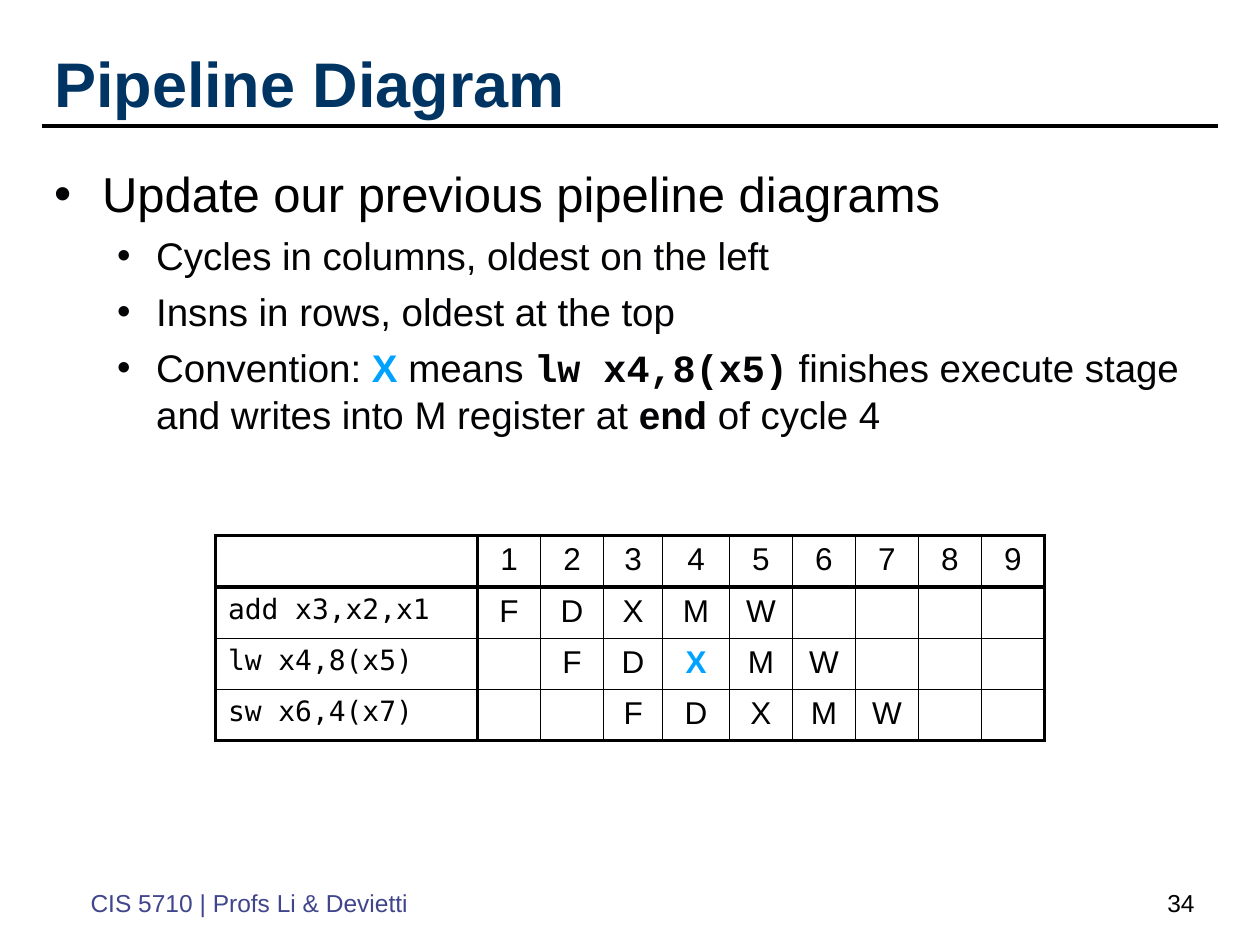
from dataclasses import dataclass

from lxml.etree import SubElement as Sub
from pptx import Presentation
from pptx.dml.color import RGBColor as Rgb
from pptx.enum.shapes import MSO_CONNECTOR as Conn
from pptx.enum.text import MSO_ANCHOR as Anchor, MSO_AUTO_SIZE as Auto, PP_ALIGN as Align
from pptx.oxml.ns import qn
from pptx.util import Inches, Pt


@dataclass(frozen=True)
class Theme:
    black: str = "000000"
    ink: str = "030305"
    navy: str = "003462"
    blue: str = "00A2FF"
    violet: str = "40458C"
    sans: str = "Arial"
    code: str = "Courier New"
    mono: str = "DejaVu Sans Mono"
    title: float = 36
    lead: float = 28
    point: float = 22
    cell: float = 18
    insn: float = 16
    foot: float = 14
    gap: float = 5.6
    thick: float = 2.25
    thin: float = 0.75


T = Theme()
HOT = {"color": T.blue, "bold": True}

# Each point: level, then runs of text with their format changes
POINTS = [
    (0, [("Update our previous pipeline diagrams", {"size": T.lead, "color": T.black})]),
    (1, [("Cycles in columns, oldest on the left", {})]),
    (1, [("Insns in rows, oldest at the top", {})]),
    (1, [("Convention: ", {}), ("X", HOT), (" means ", {}),
         ("lw x4,8(x5)", {"name": T.code, "bold": True}),
         (" finishes execute stage and writes into M register at ", {}),
         ("end", {"bold": True}), (" of cycle 4", {})]),
]
INDENTS = [(0.38, -0.38), (0.81, -0.31)]

# Each instruction starts one cycle after the one before
INSNS = ["add x3,x2,x1", "lw x4,8(x5)", "sw x6,4(x7)"]
STAGES = "FDXMW"
CYCLES = 9
COLS = [2.08, 0.5, 0.5, 0.47, 0.53] + [0.5] * 5
ROWS = [0.41, 0.38, 0.38, 0.38]


def add_run(para, text, size, color=T.black, name=T.sans, bold=False):
    run = para.add_run()
    run.text = text
    run.font.color.rgb = Rgb.from_string(color)
    for key, value in {"size": Pt(size), "name": name, "bold": bold}.items():
        setattr(run.font, key, value)


def place(shape, box):
    for key, value in zip(("left", "top", "width", "height"), box):
        setattr(shape, key, Inches(value))


def set_frame(shape, anchor):
    frame = shape.text_frame
    form = {"word_wrap": True, "auto_size": Auto.NONE, "vertical_anchor": anchor}
    for key, value in form.items():
        setattr(frame, key, value)
    return frame


def add_title(slide, box):
    shape = slide.shapes.title
    place(shape, box)
    para = set_frame(shape, Anchor.BOTTOM).paragraphs[0]
    para.alignment = Align.LEFT
    add_run(para, "Pipeline Diagram", T.title, T.navy, bold=True)
    # Rule under the title
    left, top, width, height = box
    base = Inches(top + height)
    rule = slide.shapes.add_connector(
        Conn.STRAIGHT, Inches(left), base, Inches(left + width), base)
    rule.line.color.rgb = Rgb.from_string(T.black)
    rule.line.width = Pt(T.thick)
    Sub(rule._element.spPr, qn("a:effectLst"))


def set_bullet(para, level):
    props = para._p.get_or_add_pPr()
    for key, value in zip(("marL", "indent"), INDENTS[level]):
        props.set(key, str(Inches(value)))
    Sub(Sub(props, qn("a:buClr")), qn("a:srgbClr"), val=T.ink)
    Sub(props, qn("a:buFont"), typeface=T.sans)
    Sub(props, qn("a:buChar"), char="•")


def add_body(slide, box):
    shape = slide.placeholders[1]
    place(shape, box)
    frame = set_frame(shape, Anchor.TOP)
    for i, (level, runs) in enumerate(POINTS):
        para = frame.add_paragraph() if i else frame.paragraphs[0]
        para.level = level
        para.space_before = Pt(T.gap)
        set_bullet(para, level)
        for text, form in runs:
            add_run(para, text, **{"size": T.point, "color": T.ink, **form})


def set_edges(cell, row, col):
    # Thick around the table, below the head row and after the first column
    heavy = {"L": col < 2, "R": col in (0, CYCLES),
             "T": row < 2, "B": row in (0, len(INSNS))}
    props = cell._tc.get_or_add_tcPr()
    for side, bold in heavy.items():
        width = Pt(T.thick if bold else T.thin)
        edge = Sub(props, qn("a:ln" + side), w=str(width))
        Sub(Sub(edge, qn("a:solidFill")), qn("a:srgbClr"), val=T.black)
    cell.fill.background()


def cell_text(row, col):
    if row == 0:
        return str(col) if col else ""
    if col == 0:
        return INSNS[row - 1]
    step = col - row
    return STAGES[step] if 0 <= step < len(STAGES) else ""


def add_grid(slide, box):
    shape = slide.shapes.add_table(len(ROWS), len(COLS), *map(Inches, box))
    table = shape.table
    table.first_row = table.horz_banding = False
    for col, width in zip(table.columns, COLS):
        col.width = Inches(width)
    for row, height in zip(table.rows, ROWS):
        row.height = Inches(height)
    for r in range(len(ROWS)):
        for c in range(len(COLS)):
            cell = table.cell(r, c)
            set_edges(cell, r, c)
            text = cell_text(r, c)
            if not text:
                continue
            para = cell.text_frame.paragraphs[0]
            para.alignment = Align.CENTER if c else Align.LEFT
            form = {"size": T.cell} if c else {"size": T.insn, "name": T.mono}
            if (r, c) == (2, 4):
                form.update(HOT)
            elif r == 0 and c > 7:
                form["color"] = T.ink
            add_run(para, text, **form)


def add_note(slide, box, text, color, align):
    shape = slide.shapes.add_textbox(*map(Inches, box))
    para = set_frame(shape, Anchor.BOTTOM).paragraphs[0]
    para.alignment = align
    add_run(para, text, T.foot, color)


def main():
    deck = Presentation()
    deck.slide_width, deck.slide_height = Inches(10), Inches(7.5)
    slide = deck.slides.add_slide(deck.slide_layouts[1])
    add_title(slide, (0.33, 0.25, 9.34, 0.75))
    add_body(slide, (0.33, 1.25, 9.33, 5.58))
    add_grid(slide, (1.71, 4.25, sum(COLS), sum(ROWS)))
    # Footer and page number
    add_note(slide, (0.62, 7, 6.25, 0.33), "CIS 5710 | Profs Li & Devietti",
             T.violet, Align.LEFT)
    add_note(slide, (7.5, 7, 2.08, 0.33), "34", T.black, Align.RIGHT)
    deck.save("out.pptx")


if __name__ == "__main__":
    main()
